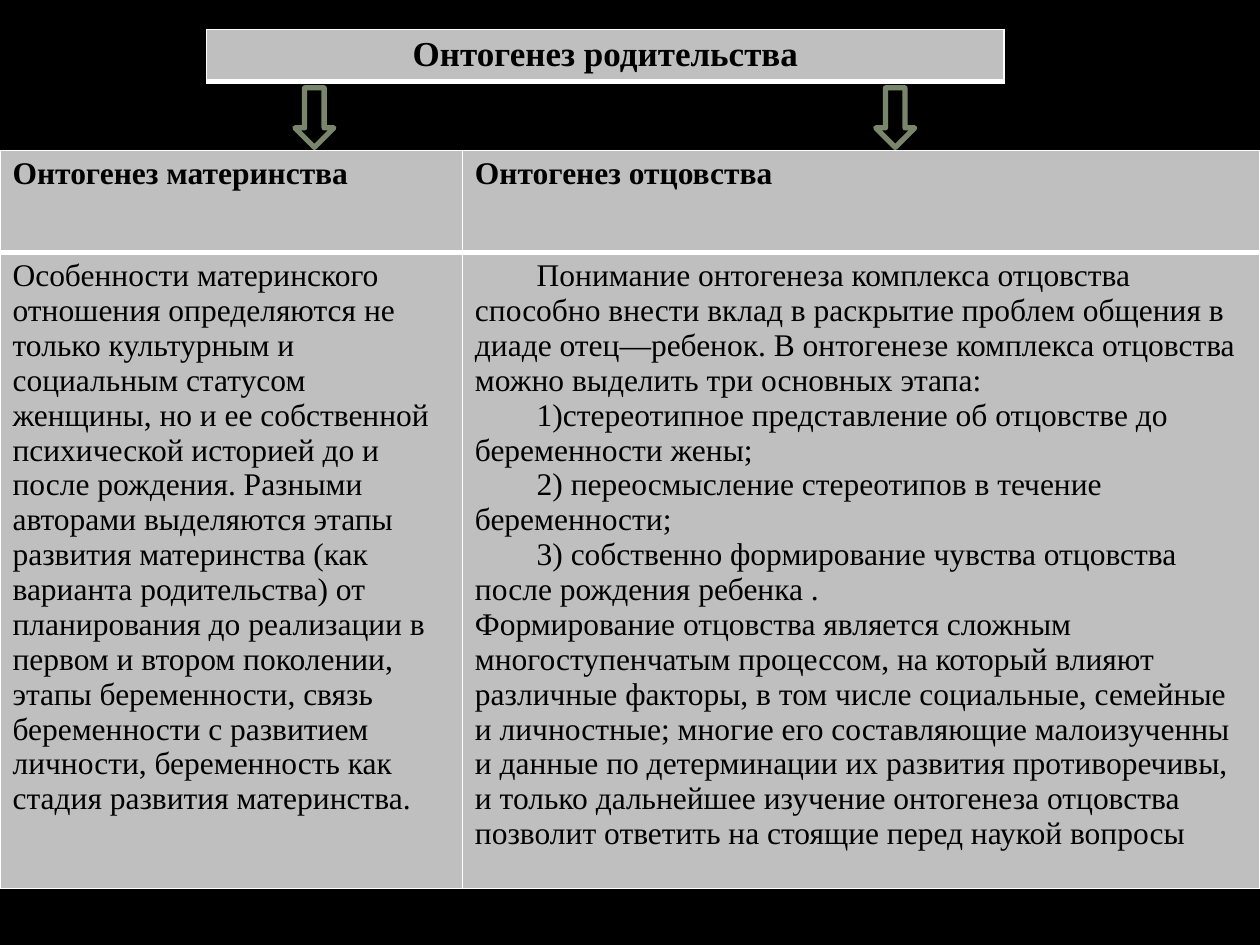
from dataclasses import dataclass

from lxml.etree import SubElement
from pptx import Presentation
from pptx.dml.color import RGBColor
from pptx.enum.shapes import MSO_SHAPE
from pptx.enum.text import PP_ALIGN
from pptx.oxml.ns import qn
from pptx.util import Inches, Pt

COLORS = {"black": "000000", "cell": "BFBFBF", "border": "FFFFFF", "arrow": "7A866C"}
FONT = "Times New Roman"
WIDTH, HEIGHT = 10, 7.5
INDENT = 0.49


@dataclass(frozen=True)
class Para:
    text: str
    indent: float = 0
    numbered: bool = False


@dataclass(frozen=True)
class Cell:
    paras: tuple[Para, ...]
    size: int = 18
    header: bool = False
    centered: bool = False


@dataclass(frozen=True)
class Grid:
    left: float
    top: float
    cols: tuple[float, ...]
    rows: tuple[float, ...]
    cells: tuple[tuple[Cell, ...], ...]


TITLE = Grid(0.164, 0.031, (0.633,), (0.055,), (
    (Cell((Para("Онтогенез родительства"),), 20, True, True),),
))

STAGES = Grid(0, 0.159, (0.367, 0.633), (0.108, 0.673), (
    (
        Cell((Para("Онтогенез материнства"),), header=True),
        Cell((Para("Онтогенез отцовства"),), header=True),
    ),
    (
        Cell((Para(
            "Особенности материнского отношения определяются не только культурным и "
            "социальным статусом женщины, но и ее собственной психической историей до и "
            "после рождения. Разными авторами выделяются этапы развития материнства (как "
            "варианта родительства) от планирования до реализации в первом и втором "
            "поколении, этапы беременности, связь беременности с развитием личности, "
            "беременность как стадия развития материнства."),)),
        Cell((
            Para("Понимание онтогенеза комплекса отцовства способно внести вклад в "
                 "раскрытие проблем общения в диаде отец—ребенок. В онтогенезе комплекса "
                 "отцовства можно выделить три основных этапа:", INDENT),
            Para("стереотипное представление об отцовстве до беременности жены;",
                 INDENT, True),
            Para(" переосмысление стереотипов в течение беременности;", INDENT, True),
            Para(" собственно формирование чувства отцовства после рождения ребенка .",
                 INDENT, True),
            Para("Формирование отцовства является сложным многоступенчатым процессом, на "
                 "который влияют различные факторы, в том числе социальные, семейные и "
                 "личностные; многие его составляющие малоизученны и данные по "
                 "детерминации их развития противоречивы, и только дальнейшее изучение "
                 "онтогенеза отцовства позволит ответить на стоящие перед наукой вопросы"),
        )),
    ),
))

ARROW_LEFTS = (0.234, 0.695)
ARROW_TOP, ARROW_WIDTH, ARROW_HEIGHT = 0.093, 0.031, 0.063


def rgb(name: str) -> RGBColor:
    return RGBColor.from_string(COLORS[name])


def x(share: float) -> int:
    return Inches(share * WIDTH)


def y(share: float) -> int:
    return Inches(share * HEIGHT)


def set_borders(cell, widths: dict[str, int]) -> None:
    tc_pr = cell._tc.get_or_add_tcPr()
    for side, width in widths.items():
        ln = SubElement(tc_pr, qn(f"a:ln{side}"), w=str(Pt(width)))
        fill = SubElement(ln, qn("a:solidFill"))
        SubElement(fill, qn("a:srgbClr"), val=COLORS["border"])


def write_para(p, para: Para, item: Cell) -> None:
    p.text = para.text
    if item.centered:
        p.alignment = PP_ALIGN.CENTER
    if para.indent:
        p_pr = p._p.get_or_add_pPr()
        p_pr.set("marL", "0")
        p_pr.set("indent", str(Inches(para.indent)))
        if para.numbered:
            SubElement(p_pr, qn("a:buFont"), typeface="+mj-lt")
            SubElement(p_pr, qn("a:buAutoNum"), type="arabicParenR")
    for r in p.runs:
        r.font.name = FONT
        r.font.size = Pt(item.size)
        r.font.bold = item.header
        r.font.color.rgb = rgb("black")


def fill_cell(cell, item: Cell, below_header: bool) -> None:
    set_borders(cell, {"L": 1, "R": 1, "T": 3 if below_header else 1,
                       "B": 3 if item.header else 1})
    cell.fill.solid()
    cell.fill.fore_color.rgb = rgb("cell")
    tf = cell.text_frame
    for i, para in enumerate(item.paras):
        write_para(tf.add_paragraph() if i else tf.paragraphs[0], para, item)


def draw_grid(s, grid: Grid) -> None:
    frame = s.shapes.add_table(len(grid.rows), len(grid.cols), x(grid.left), y(grid.top),
                               x(sum(grid.cols)), y(sum(grid.rows)))
    table = frame.table
    for col, share in zip(table.columns, grid.cols):
        col.width = x(share)
    for i, (row, share) in enumerate(zip(table.rows, grid.rows)):
        row.height = y(share)
        for cell, item in zip(row.cells, grid.cells[i]):
            fill_cell(cell, item, i > 0)


def draw_arrow(s, left: float) -> None:
    sp = s.shapes.add_shape(MSO_SHAPE.DOWN_ARROW, x(left), y(ARROW_TOP),
                            x(ARROW_WIDTH), y(ARROW_HEIGHT))
    sp.shadow.inherit = False
    sp.fill.solid()
    sp.fill.fore_color.rgb = rgb("black")
    sp.line.color.rgb = rgb("arrow")
    sp.line.width = Pt(3)


def main() -> None:
    prs = Presentation()
    prs.slide_width, prs.slide_height = Inches(WIDTH), Inches(HEIGHT)
    s = prs.slides.add_slide(prs.slide_layouts[6])
    s.background.fill.solid()
    s.background.fill.fore_color.rgb = rgb("black")
    for grid in (STAGES, TITLE):
        draw_grid(s, grid)
    for left in ARROW_LEFTS:
        draw_arrow(s, left)
    prs.save("out.pptx")


if __name__ == "__main__":
    main()
